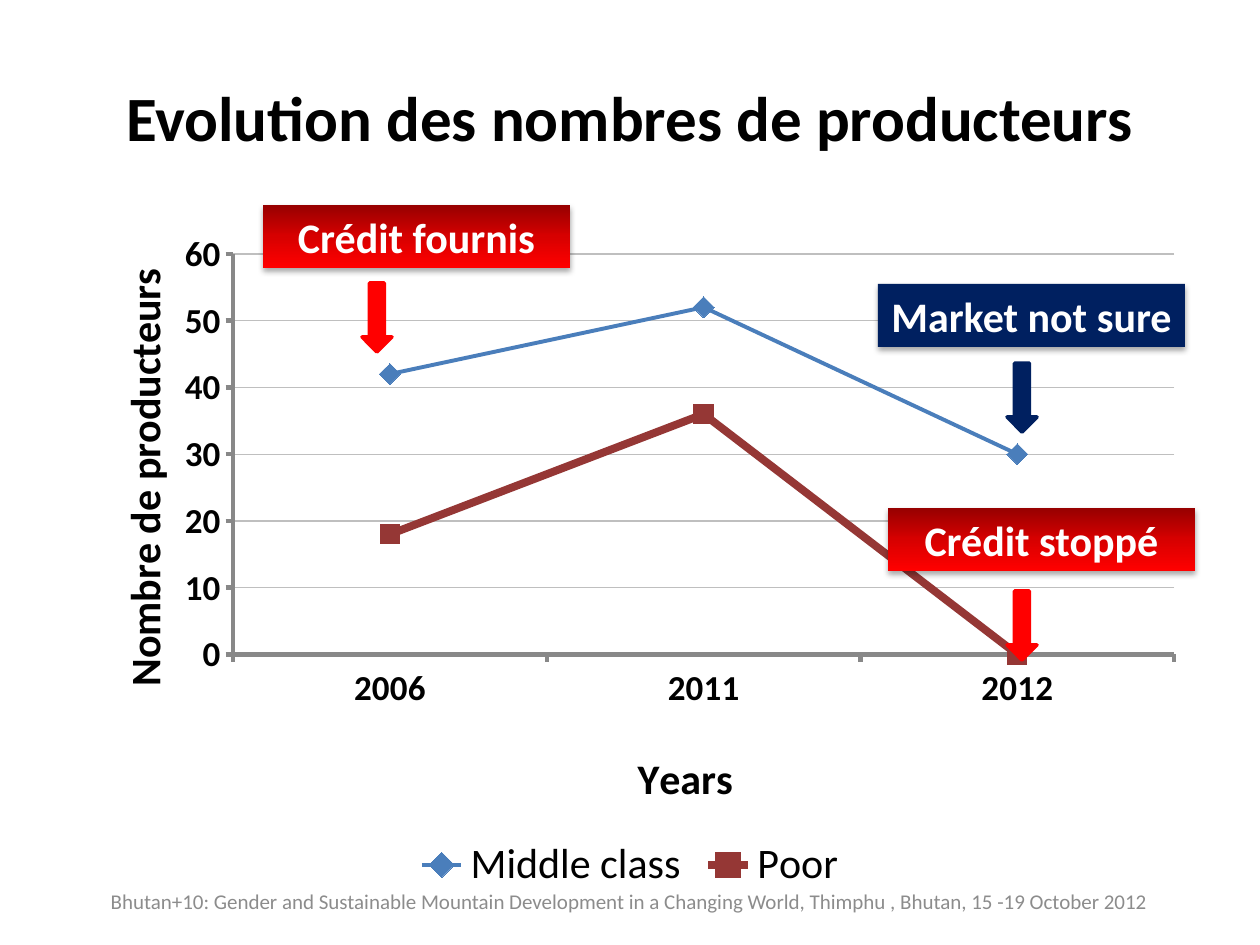
from lxml.etree import SubElement
from pptx import Presentation
from pptx.chart.data import CategoryChartData
from pptx.dml.color import RGBColor
from pptx.enum.chart import XL_CHART_TYPE, XL_LEGEND_POSITION, XL_MARKER_STYLE, XL_TICK_MARK
from pptx.enum.shapes import MSO_SHAPE
from pptx.enum.text import MSO_ANCHOR, PP_ALIGN
from pptx.oxml import parse_xml
from pptx.oxml.ns import nsdecls, qn
from pptx.util import Emu, Pt

EMU_PER_PX = 914400 / 126
FONT = "Calibri"
COLORS = {
    "black": "000000", "white": "FFFFFF", "footer": "8C8C8C",
    "axis": "888888", "grid": "BFBFBF",
    "middle_line": "4A7EBB", "middle": "4F81BD", "middle_late": "17375E", "poor": "953735",
    "red": "FF0000", "red_mid": "D70000", "red_dark": "970000", "navy": "002060",
}


def px(length):
    return Emu(round(length * EMU_PER_PX))


def box(left, top, width, height):
    return px(left), px(top), px(width), px(height)


def rgb(name):
    return RGBColor.from_string(COLORS[name])


def style_font(font, size, color="black", bold=False):
    font.name = FONT
    font.size = Pt(size)
    font.bold = bold
    font.color.rgb = rgb(color)


def style_line(line, color, width):
    line.color.rgb = rgb(color)
    line.width = Pt(width)


def write_centred(frame, text, size, color, bold=False, wrap=True):
    frame.word_wrap = wrap
    frame.vertical_anchor = MSO_ANCHOR.MIDDLE
    paragraph = frame.paragraphs[0]
    paragraph.alignment = PP_ALIGN.CENTER
    run = paragraph.add_run()
    run.text = text
    style_font(run.font, size, color, bold)


def add_text(slide, place, text, size, color, bold=False):
    frame = slide.shapes.add_textbox(*box(*place)).text_frame
    write_centred(frame, text, size, color, bold)


def set_red_gradient(shape):
    """Vertical gradient, dark at the bottom."""
    shape.fill.gradient()
    shape.fill.gradient_angle = 270
    stop_list = shape._element.spPr.find(qn("a:gradFill")).find(qn("a:gsLst"))
    for stop in list(stop_list):
        stop_list.remove(stop)
    for position, color in ((0, "red_dark"), (50, "red_mid"), (100, "red")):
        stop = SubElement(stop_list, qn("a:gs"), pos=str(position * 1000))
        SubElement(stop, qn("a:srgbClr"), val=COLORS[color])


def add_soft_shadow(shape):
    shape._element.spPr.append(parse_xml(
        f'<a:effectLst {nsdecls("a")}>'
        '<a:outerShdw blurRad="40000" dist="23000" dir="5400000" rotWithShape="0">'
        f'<a:srgbClr val="{COLORS["black"]}"><a:alpha val="35000"/></a:srgbClr>'
        '</a:outerShdw></a:effectLst>'))


def add_callout(slide, left, top, text, color):
    label = slide.shapes.add_shape(MSO_SHAPE.RECTANGLE, *box(left, top, 307, 63))
    if color == "red":
        set_red_gradient(label)
    else:
        label.fill.solid()
        label.fill.fore_color.rgb = rgb(color)
    label.line.fill.background()
    add_soft_shadow(label)
    write_centred(label.text_frame, text, 24, "white", bold=True, wrap=False)


def add_down_arrow(slide, left, top, color):
    arrow = slide.shapes.add_shape(MSO_SHAPE.DOWN_ARROW, *box(left, top, 30, 69))
    arrow.shadow.inherit = False
    arrow.fill.solid()
    arrow.fill.fore_color.rgb = rgb(color)
    style_line(arrow.line, color, 2)


def manual_layout(inner=False, **fractions):
    """Place a chart part by fractions of the chart's size."""
    target = '<c:layoutTarget val="inner"/>' if inner else ""
    modes = "".join(f'<c:{side}Mode val="edge"/>' for side in "xy")
    values = "".join(f'<c:{key} val="{value}"/>' for key, value in fractions.items())
    return parse_xml(f'<c:layout {nsdecls("c")}><c:manualLayout>'
                     f'{target}{modes}{values}</c:manualLayout></c:layout>')


def style_axis(axis, title, x, y):
    run = axis.axis_title.text_frame.paragraphs[0].add_run()
    run.text = title
    style_font(run.font, 24, bold=True)
    title_element = axis.axis_title._element
    for layout in title_element.findall(qn("c:layout")):
        title_element.remove(layout)
    title_element.find(qn("c:tx")).addnext(manual_layout(x=x, y=y))
    style_font(axis.tick_labels.font, 20, bold=True)
    axis.major_tick_mark = XL_TICK_MARK.OUTSIDE
    axis.minor_tick_mark = XL_TICK_MARK.NONE
    style_line(axis.format.line, "axis", 2.5)


def style_marker(marker, style, size, color):
    marker.style = style
    marker.size = size
    marker.format.fill.solid()
    marker.format.fill.fore_color.rgb = rgb(color)
    marker.format.line.color.rgb = rgb(color)


def style_series(series, line_color, width, marker_style, size, marker_color):
    series.smooth = False
    style_line(series.format.line, line_color, width)
    style_marker(series.marker, marker_style, size, marker_color)


def add_producer_chart(slide):
    data = CategoryChartData()
    data.categories = ["2006", "2011", "2012"]
    data.add_series("Middle class", (42, 52, 30))
    data.add_series("Poor", (18, 36, 0))
    chart = slide.shapes.add_chart(
        XL_CHART_TYPE.LINE_MARKERS, *box(63, 220, 1134, 679), data).chart
    style_font(chart.font, 18)
    chart.has_title = False
    chart.has_legend = True
    chart.legend.position = XL_LEGEND_POSITION.BOTTOM
    chart.legend.include_in_layout = False
    style_font(chart.legend.font, 24)

    style_axis(chart.category_axis, "Years", 0.5, 0.77)
    counts = chart.value_axis
    style_axis(counts, "Nombre de producteurs", 0.04, 0.06)
    counts.minimum_scale, counts.maximum_scale, counts.major_unit = 0, 60, 10
    style_line(counts.major_gridlines.format.line, "grid", 0.75)

    plot = chart.plots[0]
    plot.vary_by_categories = False
    middle_class, poor = plot.series
    style_series(middle_class, "middle_line", 2.25, XL_MARKER_STYLE.DIAMOND, 12, "middle")
    for year in (1, 2):
        point = middle_class.points[year]
        style_marker(point.marker, XL_MARKER_STYLE.DIAMOND, 12, "middle_late")
        style_line(point.format.line, "middle_line", 2.25)
    style_series(poor, "poor", 4.5, XL_MARKER_STYLE.SQUARE, 11, "poor")

    plot_area = chart._chartSpace.chart.plotArea
    for layout in plot_area.findall(qn("c:layout")):
        plot_area.remove(layout)
    plot_area.insert(0, manual_layout(inner=True, x=0.15, y=0.05, w=0.83, h=0.59))


def main():
    deck = Presentation()
    deck.slide_width, deck.slide_height = px(1260), px(945)
    slide = deck.slides.add_slide(deck.slide_layouts[6])
    add_text(slide, (63, 38, 1134, 157), "Evolution des nombres de producteurs",
             36, "black", bold=True)
    add_producer_chart(slide)
    events = (
        ("Market not sure", "navy", (878, 284), (1007, 363)),
        ("Crédit stoppé", "red", (888, 508), (1007, 591)),
        ("Crédit fournis", "red", (263, 205), (362, 283)),
    )
    for text, color, label_at, arrow_at in events:
        add_down_arrow(slide, *arrow_at, color)
        add_callout(slide, *label_at, text, color)
    add_text(slide, (64, 876, 1131, 50),
             "Bhutan+10: Gender and Sustainable Mountain Development in a Changing World, "
             "Thimphu , Bhutan, 15 -19 October 2012", 12, "footer")
    deck.save("out.pptx")


if __name__ == "__main__":
    main()
